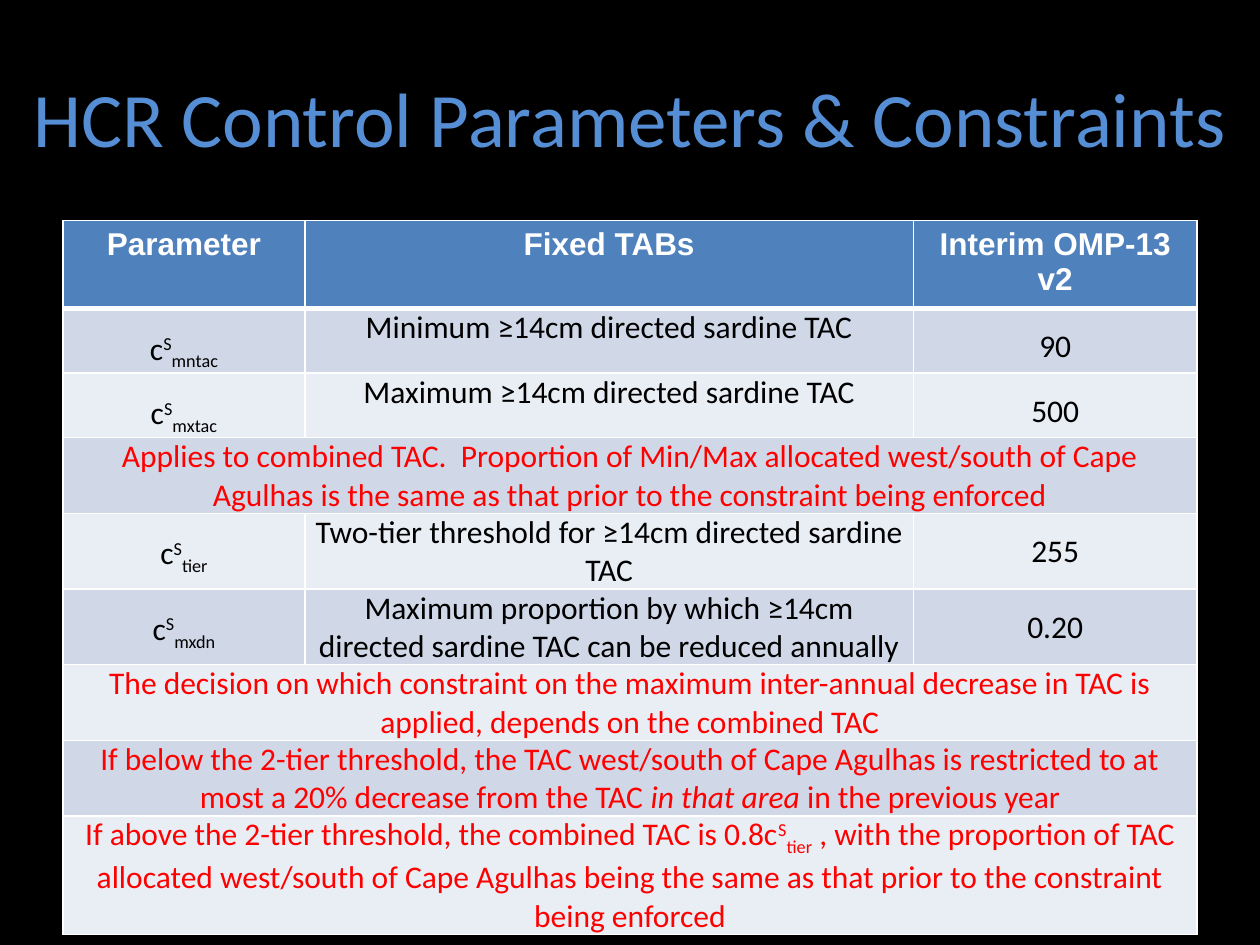
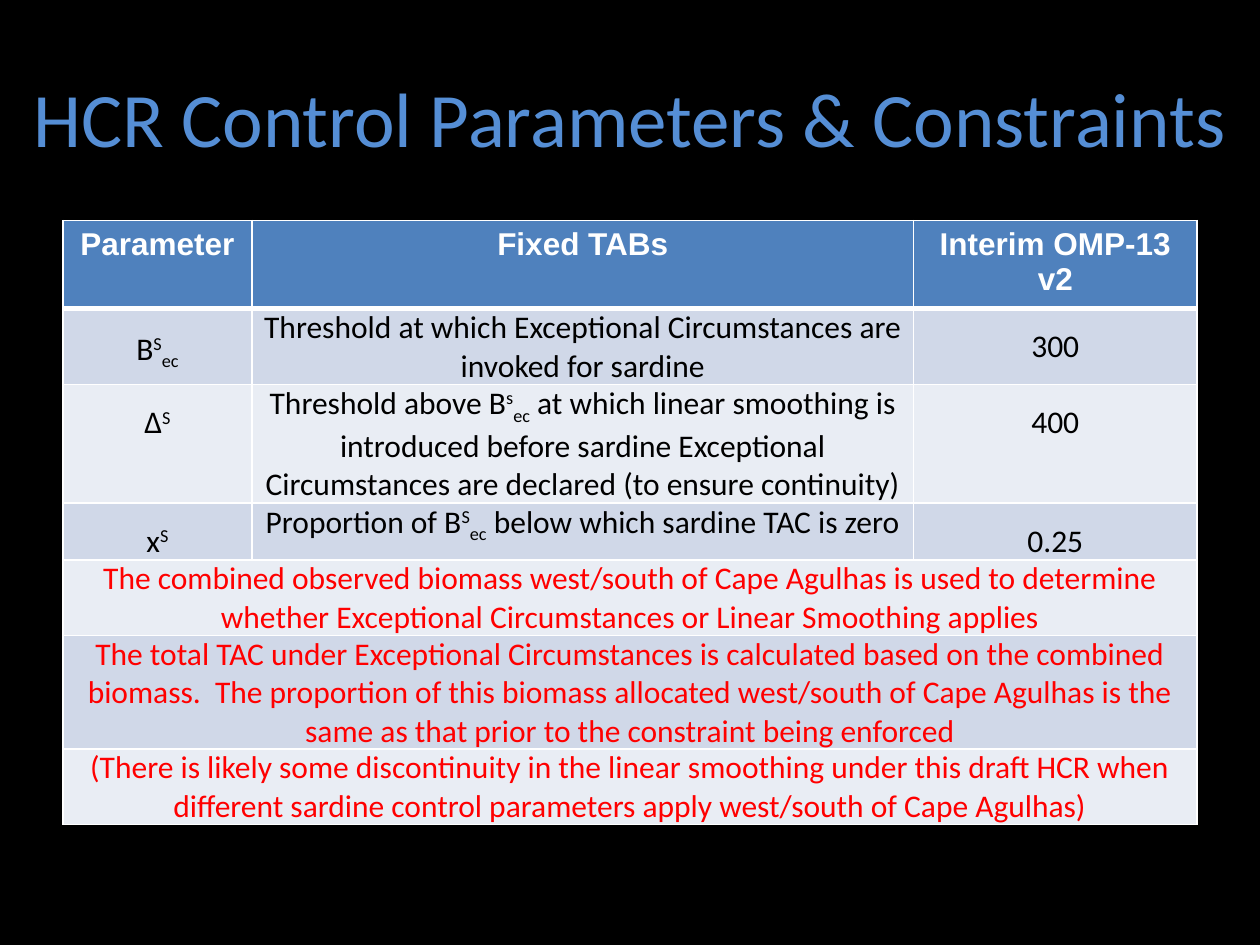
from dataclasses import dataclass
from typing import NamedTuple

from lxml import etree
from pptx import Presentation
from pptx.dml.color import RGBColor
from pptx.enum.text import MSO_ANCHOR, PP_ALIGN
from pptx.util import Inches, Pt

CENTER = PP_ALIGN.CENTER
MIDDLE = MSO_ANCHOR.MIDDLE

BLACK = RGBColor(0x00, 0x00, 0x00)
WHITE = RGBColor(0xFF, 0xFF, 0xFF)
RED = RGBColor(0xFF, 0x00, 0x00)
TITLE_BLUE = RGBColor(0x55, 0x8E, 0xD5)
HEADER_BLUE = RGBColor(0x4F, 0x81, 0xBD)
BANDS = (RGBColor(0xD0, 0xD8, 0xE8), RGBColor(0xE9, 0xED, 0xF4))

BODY_FONT = "Calibri"
HEADER_FONT = "Arial"
SUPER, SUB = 30000, -25000
THIN, THICK = Pt(1), Pt(3)
ROW_HEIGHT = Inches(0.41)
SIDE_MARGIN = Inches(0.07)
DRAWING_NS = "http://schemas.openxmlformats.org/drawingml/2006/main"

TITLE = "HCR Control Parameters & Constraints"
HEADERS = ("Parameter", "Fixed TABs", "Interim OMP-13 v2")


class Run(NamedTuple):
    text: str
    baseline: int = 0
    italic: bool = False


Runs = tuple[Run, ...]


class Parameter(NamedTuple):
    symbol: Runs
    meaning: Runs
    value: str


class Note(NamedTuple):
    """A red remark across all columns."""
    runs: Runs


@dataclass
class TableSlide:
    widths: tuple[float, ...]
    rows: tuple[Parameter | Note, ...]


def plain(text: str) -> Runs:
    return (Run(text),)


def symbol(letter: str, sub: str = "", sup: str = "S") -> Runs:
    runs = (Run(letter), Run(sup, SUPER))
    return runs + (Run(sub, SUB),) if sub else runs


SLIDES = (
    TableSlide((1.92, 4.83, 2.25), (
        Parameter(symbol("c", "mntac"),
                  plain("Minimum ≥14cm directed sardine TAC"), "90"),
        Parameter(symbol("c", "mxtac"),
                  plain("Maximum ≥14cm directed sardine TAC"), "500"),
        Note(plain("Applies to combined TAC.  Proportion of Min/Max allocated "
                   "west/south of Cape Agulhas is the same as that prior to "
                   "the constraint being enforced")),
        Parameter(symbol("c", "tier"),
                  plain("Two-tier threshold for ≥14cm directed sardine TAC"),
                  "255"),
        Parameter(symbol("c", "mxdn"),
                  plain("Maximum proportion by which ≥14cm directed sardine "
                        "TAC can be reduced annually"), "0.20"),
        Note(plain("The decision on which constraint on the maximum "
                   "inter-annual decrease in TAC is applied, depends on the "
                   "combined TAC")),
        Note((Run("If below the 2-tier threshold, the TAC west/south of Cape "
                  "Agulhas is restricted to at most a 20% decrease from the "
                  "TAC "),
              Run("in that area ", italic=True),
              Run("in the previous year"))),
        Note(plain("If above the 2-tier threshold, the combined TAC is 0.8")
             + symbol("c", "tier")
             + plain(" , with the proportion of TAC allocated west/south of "
                     "Cape Agulhas being the same as that prior to the "
                     "constraint being enforced")),
    )),
    TableSlide((1.5, 5.25, 2.25), (
        Parameter(symbol("B", "ec"),
                  plain("Threshold at which Exceptional Circumstances are "
                        "invoked for sardine"), "300"),
        Parameter(symbol("Δ"),
                  plain("Threshold above ") + symbol("B", "ec", "s")
                  + plain(" at which linear smoothing is introduced before "
                          "sardine Exceptional Circumstances are declared "
                          "(to ensure continuity)"), "400"),
        Parameter(symbol("x"),
                  plain("Proportion of ") + symbol("B", "ec")
                  + plain(" below which sardine TAC is zero"), "0.25"),
        Note(plain("The combined observed biomass west/south of Cape Agulhas "
                   "is used to determine whether Exceptional Circumstances or "
                   "Linear Smoothing applies")),
        Note(plain("The total TAC under Exceptional Circumstances is "
                   "calculated based on the combined biomass.  The proportion "
                   "of this biomass allocated west/south of Cape Agulhas is "
                   "the same as that prior to the constraint being enforced")),
        Note(plain("(There is likely some discontinuity in the linear "
                   "smoothing under this draft HCR when different sardine "
                   "control parameters apply west/south of Cape Agulhas)")),
    )),
)


def add_runs(p, runs: Runs, color: RGBColor, font: str = BODY_FONT,
             size: int = 18, bold: bool = False) -> None:
    p.alignment = CENTER
    for run in runs:
        r = p.add_run()
        r.text = run.text
        r.font.name = font
        r.font.size = Pt(size)
        r.font.bold = bold
        r.font.italic = run.italic
        r.font.color.rgb = color
        if run.baseline:
            r._r.get_or_add_rPr().set("baseline", str(run.baseline))


def style_cell(cell, fill: RGBColor, top: int, bottom: int) -> None:
    """Draw white borders, then fill; the schema wants lines before the fill."""
    tc_pr = cell._tc.get_or_add_tcPr()
    for side, width in (("L", THIN), ("R", THIN), ("T", top), ("B", bottom)):
        ln = etree.SubElement(tc_pr, f"{{{DRAWING_NS}}}ln{side}", w=str(width))
        solid = etree.SubElement(ln, f"{{{DRAWING_NS}}}solidFill")
        etree.SubElement(solid, f"{{{DRAWING_NS}}}srgbClr", val=str(WHITE))
    cell.fill.solid()
    cell.fill.fore_color.rgb = fill


def fill_body_cell(cell, runs: Runs, color: RGBColor = BLACK,
                   spacing: float = 1.0) -> None:
    cell.margin_left = cell.margin_right = SIDE_MARGIN
    cell.margin_top = cell.margin_bottom = 0
    p = cell.text_frame.paragraphs[0]
    p.line_spacing = spacing
    p.space_after = Pt(3)
    add_runs(p, runs, color)


def add_title(s) -> None:
    sp = s.shapes.add_textbox(0, Inches(0.3), Inches(10), Inches(1.25))
    tf = sp.text_frame
    tf.word_wrap = True
    tf.vertical_anchor = MIDDLE
    add_runs(tf.paragraphs[0], plain(TITLE), TITLE_BLUE, size=44)


def add_parameter_table(s, content: TableSlide) -> None:
    n_rows = len(content.rows) + 1
    table = s.shapes.add_table(n_rows, len(HEADERS), Inches(0.5), Inches(1.75),
                               Inches(9), ROW_HEIGHT * n_rows).table
    for column, width in zip(table.columns, content.widths):
        column.width = Inches(width)
    for i, row in enumerate(table.rows):
        row.height = ROW_HEIGHT
        fill = BANDS[(i - 1) % 2] if i else HEADER_BLUE
        for cell in row.cells:
            style_cell(cell, fill, THICK if i == 1 else THIN,
                       THIN if i else THICK)

    for j, header in enumerate(HEADERS):
        add_runs(table.cell(0, j).text_frame.paragraphs[0], plain(header),
                 WHITE, HEADER_FONT, bold=True)

    for i, row in enumerate(content.rows, start=1):
        first, middle, last = (table.cell(i, j) for j in range(len(HEADERS)))
        if isinstance(row, Note):
            first.merge(last)
            fill_body_cell(first, row.runs, RED)
        else:
            fill_body_cell(first, row.symbol, spacing=1.5)
            fill_body_cell(middle, row.meaning)
            fill_body_cell(last, plain(row.value), spacing=1.5)


def main() -> None:
    prs = Presentation()
    prs.slide_width = Inches(10)
    prs.slide_height = Inches(7.5)
    for content in SLIDES:
        s = prs.slides.add_slide(prs.slide_layouts[6])
        s.background.fill.solid()
        s.background.fill.fore_color.rgb = BLACK
        add_title(s)
        add_parameter_table(s, content)
    prs.save("out.pptx")


if __name__ == "__main__":
    main()
